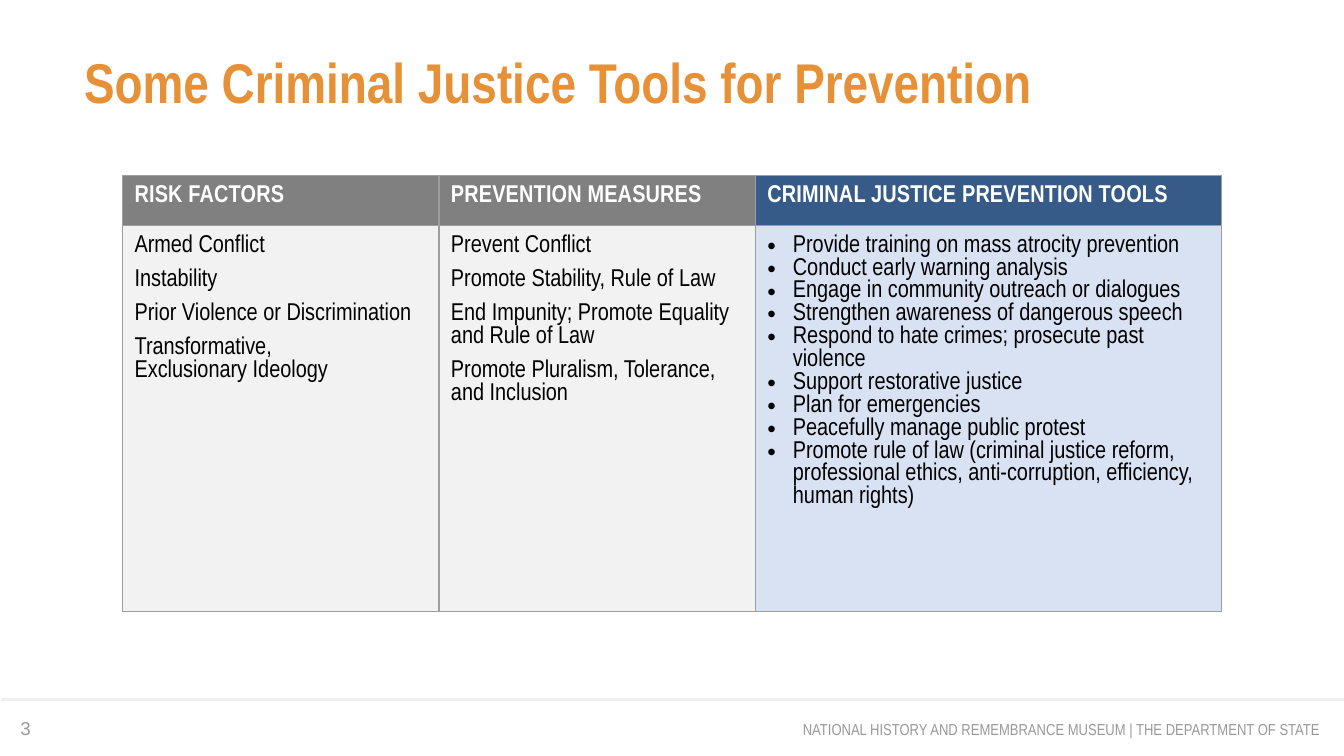
"""Build the slide on criminal justice tools for prevention."""
import dataclasses

import lxml.etree
import pptx
import pptx.dml.color
import pptx.enum.shapes
import pptx.enum.text
import pptx.oxml.ns
import pptx.util

RGBColor = pptx.dml.color.RGBColor
Anchor = pptx.enum.text.MSO_ANCHOR
Align = pptx.enum.text.PP_ALIGN
qn = pptx.oxml.ns.qn

ORANGE = RGBColor(0xE6, 0x91, 0x38)
WHITE = RGBColor(0xFF, 0xFF, 0xFF)
BLACK = RGBColor(0x00, 0x00, 0x00)
FOOTER_GRAY = RGBColor(0x99, 0x99, 0x99)
RULE_GRAY = RGBColor(0xEF, 0xEF, 0xEF)
BORDER_GRAY = RGBColor(0x9E, 0x9E, 0x9E)
HEAD_GRAY = RGBColor(0x80, 0x80, 0x80)
HEAD_BLUE = RGBColor(0x37, 0x5B, 0x89)
BODY_GRAY = RGBColor(0xF2, 0xF2, 0xF2)
BODY_BLUE = RGBColor(0xD9, 0xE2, 0xF3)

NARROW = "Arial Narrow"
WIDTH = pptx.util.Inches(10)
HEIGHT = WIDTH * 9 // 16
ROW_SHARES = (6.6, 51.1)


@dataclasses.dataclass(frozen=True)
class Box:
    """A frame in percent of the slide's width and height."""

    left: float
    top: float
    width: float
    height: float

    def frame(self) -> tuple[int, int, int, int]:
        return across(self.left), down(self.top), across(self.width), down(self.height)


@dataclasses.dataclass(frozen=True)
class Style:
    """The look of a run of text."""

    size: float
    color: RGBColor
    font: str = NARROW
    bold: bool = False
    spacing: int = 0


@dataclasses.dataclass(frozen=True)
class Column:
    """A table column with its heading and its list of entries."""

    width: float
    heading: str
    entries: tuple[str, ...]
    head_fill: RGBColor = HEAD_GRAY
    body_fill: RGBColor = BODY_GRAY
    bulleted: bool = False


TITLE = Style(30, ORANGE, bold=True)
HEADING = Style(13, WHITE, bold=True, spacing=10)
ENTRY = Style(13, BLACK)
FOOTER = Style(8.5, FOOTER_GRAY)
NUMBER = Style(10, FOOTER_GRAY, font="Arial")

COLUMNS = (
    Column(23.54, "RISK FACTORS", (
        "Armed Conflict",
        "Instability",
        "Prior Violence or Discrimination",
        "Transformative, \vExclusionary Ideology",
    )),
    Column(23.54, "PREVENTION MEASURES", (
        "Prevent Conflict",
        "Promote Stability, Rule of Law",
        "End Impunity; Promote Equality and Rule of Law",
        "Promote Pluralism, Tolerance, and Inclusion",
    )),
    Column(34.7, "CRIMINAL JUSTICE PREVENTION TOOLS", (
        "Provide training on mass atrocity prevention",
        "Conduct early warning analysis",
        "Engage in community outreach or dialogues",
        "Strengthen awareness of dangerous speech",
        "Respond to hate crimes; prosecute past violence",
        "Support restorative justice",
        "Plan for emergencies",
        "Peacefully manage public protest",
        "Promote rule of law (criminal justice reform, professional ethics, "
        "anti-corruption, efficiency, human rights)",
    ), HEAD_BLUE, BODY_BLUE, bulleted=True),
)


def across(share: float) -> int:
    return round(WIDTH * share / 100)


def down(share: float) -> int:
    return round(HEIGHT * share / 100)


def write(p, text: str, style: Style) -> None:
    p.text = text
    for r in p.runs:
        r.font.name = style.font
        r.font.size = pptx.util.Pt(style.size)
        r.font.bold = style.bold
        r.font.color.rgb = style.color
        if style.spacing:
            r._r.get_or_add_rPr().set("spc", str(style.spacing))


def set_insets(tf, inset: float) -> None:
    tf.margin_left = tf.margin_right = pptx.util.Inches(inset)
    tf.margin_top = tf.margin_bottom = pptx.util.Inches(inset)


def add_bullet(p) -> None:
    indent = pptx.util.Inches(0.19)
    pPr = p._p.get_or_add_pPr()
    pPr.set("marL", str(indent))
    pPr.set("indent", str(-indent))
    color = lxml.etree.SubElement(pPr, qn("a:buClr"))
    lxml.etree.SubElement(color, qn("a:srgbClr"), val=str(BLACK))
    lxml.etree.SubElement(pPr, qn("a:buFont"), typeface="Arial")
    lxml.etree.SubElement(pPr, qn("a:buChar"), char="•")


def format_cell(cell, fill: RGBColor) -> None:
    cell.margin_left = cell.margin_right = pptx.util.Inches(0.09)
    cell.margin_top = cell.margin_bottom = pptx.util.Inches(0.07)
    cell.vertical_anchor = Anchor.TOP
    tcPr = cell._tc.get_or_add_tcPr()
    for side in ("a:lnL", "a:lnR", "a:lnT", "a:lnB"):
        ln = lxml.etree.SubElement(tcPr, qn(side), w=str(pptx.util.Pt(0.75)))
        solid = lxml.etree.SubElement(ln, qn("a:solidFill"))
        lxml.etree.SubElement(solid, qn("a:srgbClr"), val=str(BORDER_GRAY))
    cell.fill.solid()
    cell.fill.fore_color.rgb = fill


def add_title(s, box: Box, text: str) -> None:
    sp = s.shapes.title
    sp.left, sp.top, sp.width, sp.height = box.frame()
    tf = sp.text_frame
    set_insets(tf, 0)
    tf.margin_bottom = pptx.util.Inches(0.04)
    tf.auto_size = pptx.enum.text.MSO_AUTO_SIZE.NONE
    tf.vertical_anchor = Anchor.BOTTOM
    p = tf.paragraphs[0]
    write(p, text, TITLE)
    p.alignment = Align.LEFT


def add_text(s, box: Box, text: str, style: Style, align: Align, anchor: Anchor) -> None:
    tf = s.shapes.add_textbox(*box.frame()).text_frame
    tf.word_wrap = True
    tf.vertical_anchor = anchor
    set_insets(tf, 0.1)
    write(tf.paragraphs[0], text, style)
    tf.paragraphs[0].alignment = align


def add_rule(s, left: float, right: float, top: float) -> None:
    line = s.shapes.add_connector(
        pptx.enum.shapes.MSO_CONNECTOR.STRAIGHT,
        across(left), down(top), across(right), down(top))
    line.line.color.rgb = RULE_GRAY
    line.line.width = pptx.util.Pt(1.5)
    lxml.etree.SubElement(line._element.spPr, qn("a:effectLst"))


def add_columns(s, left: float, top: float) -> None:
    box = Box(left, top, sum(c.width for c in COLUMNS), sum(ROW_SHARES))
    table = s.shapes.add_table(len(ROW_SHARES), len(COLUMNS), *box.frame()).table
    for row, share in zip(table.rows, ROW_SHARES):
        row.height = down(share)
    for i, column in enumerate(COLUMNS):
        table.columns[i].width = across(column.width)
        head, body = table.cell(0, i), table.cell(1, i)
        format_cell(head, column.head_fill)
        format_cell(body, column.body_fill)
        write(head.text_frame.paragraphs[0], column.heading, HEADING)
        tf = body.text_frame
        for j, entry in enumerate(column.entries):
            p = tf.add_paragraph() if j else tf.paragraphs[0]
            write(p, entry, ENTRY)
            if column.bulleted:
                add_bullet(p)
            else:
                p.space_after = pptx.util.Pt(6)


def main() -> None:
    prs = pptx.Presentation()
    prs.slide_width, prs.slide_height = WIDTH, HEIGHT
    s = prs.slides.add_slide(prs.slide_layouts.get_by_name("Title Only"))
    add_rule(s, 0.1, 100, 92.5)
    add_text(s, Box(51.8, 92.62, 47.4, 7.65),
             "NATIONAL HISTORY AND REMEMBRANCE MUSEUM | THE DEPARTMENT OF STATE",
             FOOTER, Align.RIGHT, Anchor.MIDDLE)
    add_title(s, Box(6.25, 6.23, 87.5, 9.6), "Some Criminal Justice Tools for Prevention")
    add_text(s, Box(0.53, 91.65, 7.8, 7.65), "3", NUMBER, Align.LEFT, Anchor.BOTTOM)
    add_columns(s, 9.12, 23.2)
    prs.save("out.pptx")


if __name__ == "__main__":
    main()
